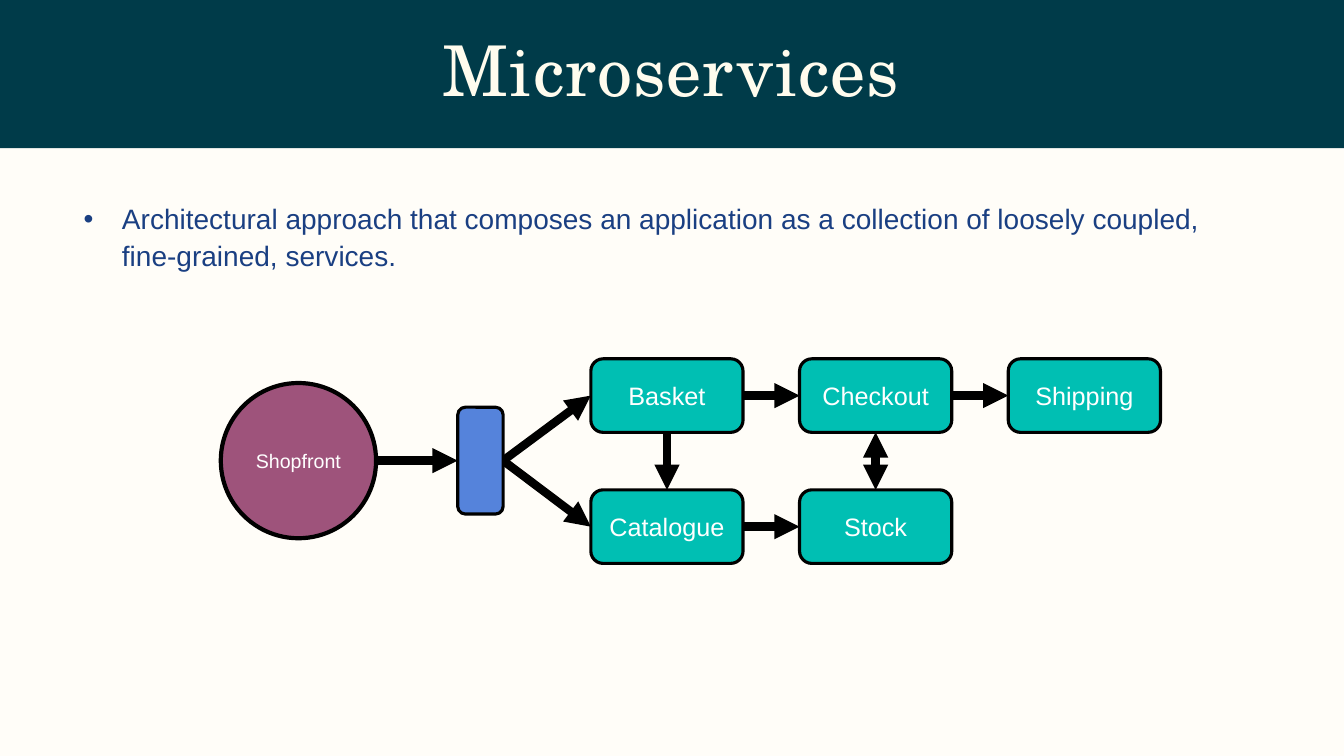
from lxml import etree
from pptx import Presentation
from pptx.dml.color import RGBColor
from pptx.enum import shapes, text
from pptx.oxml.ns import qn
from pptx.util import Inches, Pt

CREAM = RGBColor(0xFF, 0xFD, 0xF8)
PETROL = RGBColor(0x00, 0x3B, 0x49)
IVORY = RGBColor(0xFF, 0xFC, 0xEE)
NAVY = RGBColor(0x1A, 0x3F, 0x82)
TEAL = RGBColor(0x00, 0xBF, 0xB3)
BLUE = RGBColor(0x55, 0x83, 0xDB)
PLUM = RGBColor(0x9E, 0x53, 0x7B)
BLACK = RGBColor(0, 0, 0)
WHITE = RGBColor(0xFF, 0xFF, 0xFF)

SHAPE = shapes.MSO_SHAPE
TOP, LEFT, BOTTOM, RIGHT = range(4)

# Service name: (column, row) in the grid
SERVICES = {
    "Catalogue": (0, 1),
    "Stock": (1, 1),
    "Checkout": (1, 0),
    "Basket": (0, 0),
    "Shipping": (2, 0),
}
# Calls between services: caller, side, callee, side, both ways
CALLS = [
    ("Basket", RIGHT, "Checkout", LEFT, False),
    ("Checkout", RIGHT, "Shipping", LEFT, False),
    ("Checkout", BOTTOM, "Stock", TOP, True),
    ("Catalogue", RIGHT, "Stock", LEFT, False),
    ("Basket", BOTTOM, "Catalogue", TOP, False),
]


def place(shape, left, top, width, height):
    shape.left, shape.top = Inches(left), Inches(top)
    shape.width, shape.height = Inches(width), Inches(height)


def style_font(font, name, size, color):
    font.name, font.size = name, Pt(size)
    font.color.rgb = color


def add_band(page, width):
    """Draw the header band behind everything else."""
    band = page.shapes.add_shape(SHAPE.RECTANGLE, 0, 0, width, Inches(1.47))
    band.shadow.inherit = False
    band.fill.solid()
    band.fill.fore_color.rgb = PETROL
    band.line.fill.background()
    page.shapes._spTree.insert(2, band._element)


def fill_title(title, words):
    place(title, 0.86, 0.31, 11.6, 0.85)
    title.text_frame.vertical_anchor = text.MSO_ANCHOR.MIDDLE
    para = title.text_frame.paragraphs[0]
    span = para.add_run()
    span.text = words
    span.font._element.set("spc", "80")
    para.alignment = text.PP_ALIGN.CENTER
    para.line_spacing = 0.9
    para.space_before = Pt(0)
    style_font(para.font, "TeX Gyre Schola", 50, IVORY)


def fill_body(body, words):
    place(body, 0.73, 1.92, 11.87, 4.29)
    para = body.text_frame.paragraphs[0]
    para.text = words
    para.line_spacing = 1.1
    para.space_before = Pt(0)
    props = para._p.get_or_add_pPr()
    props.set("marL", str(Inches(0.38)))
    props.set("indent", str(-Inches(0.38)))
    etree.SubElement(props, qn("a:buFont"), typeface="Arial")
    etree.SubElement(props, qn("a:buChar"), char="•")
    style_font(para.font, "Arial", 20, NAVY)


def add_node(page, kind, bounds, color, label="", size=18, outline=2.25):
    node = page.shapes.add_shape(kind, *map(Inches, bounds))
    node.shadow.inherit = False
    node.fill.solid()
    node.fill.fore_color.rgb = color
    node.line.color.rgb = BLACK
    node.line.width = Pt(outline)
    if label:
        node.text_frame.vertical_anchor = text.MSO_ANCHOR.MIDDLE
        para = node.text_frame.paragraphs[0]
        para.text = label
        para.alignment = text.PP_ALIGN.CENTER
        style_font(para.font, "Arial", size, WHITE)
    return node


def add_arrow(page, target, target_side, source=None, source_side=RIGHT,
              start=(0, 0), both_ways=False):
    """Join source (or a free start point) to the target."""
    x, y = map(Inches, start)
    arrow = page.shapes.add_connector(
        shapes.MSO_CONNECTOR.STRAIGHT, x, y, x, y)
    if source is not None:
        arrow.begin_connect(source, source_side)
    arrow.end_connect(target, target_side)
    arrow.line.color.rgb = BLACK
    arrow.line.width = Pt(6)
    line = arrow.line._get_or_add_ln()
    if both_ways:
        etree.SubElement(line, qn("a:headEnd"), type="triangle")
    etree.SubElement(line, qn("a:tailEnd"), type="triangle")
    etree.SubElement(arrow._element.spPr, qn("a:effectLst"))


def add_diagram(page):
    services = {
        name: add_node(page, SHAPE.ROUNDED_RECTANGLE,
                       (5.86 + 2.07 * column, 3.56 + 1.3 * row, 1.51, 0.73),
                       TEAL, name)
        for name, (column, row) in SERVICES.items()
    }
    gateway = add_node(page, SHAPE.ROUNDED_RECTANGLE,
                       (4.54, 4.04, 0.45, 1.06), BLUE)
    for caller, side, callee, callee_side, both_ways in CALLS:
        add_arrow(page, services[callee], callee_side,
                  services[caller], side, both_ways=both_ways)
    for name in ("Basket", "Catalogue"):
        add_arrow(page, services[name], LEFT, gateway)
    page.shapes._spTree.append(gateway._element)  # bring above its arrows
    add_arrow(page, gateway, LEFT, start=(3.72, 4.57))
    add_node(page, SHAPE.OVAL, (2.19, 3.8, 1.54, 1.54), PLUM,
             "Shopfront", size=14, outline=3)


def main():
    deck = Presentation()
    deck.slide_width, deck.slide_height = Inches(13.33), Inches(7.5)
    page = deck.slides.add_slide(deck.slide_layouts[1])
    page.background.fill.solid()
    page.background.fill.fore_color.rgb = CREAM
    add_band(page, deck.slide_width)
    fill_title(page.shapes.title, "Microservices")
    fill_body(page.placeholders[1],
              "Architectural approach that composes an application as a "
              "collection of loosely coupled, fine-grained, services.")
    add_diagram(page)
    deck.save("out.pptx")


if __name__ == "__main__":
    main()
